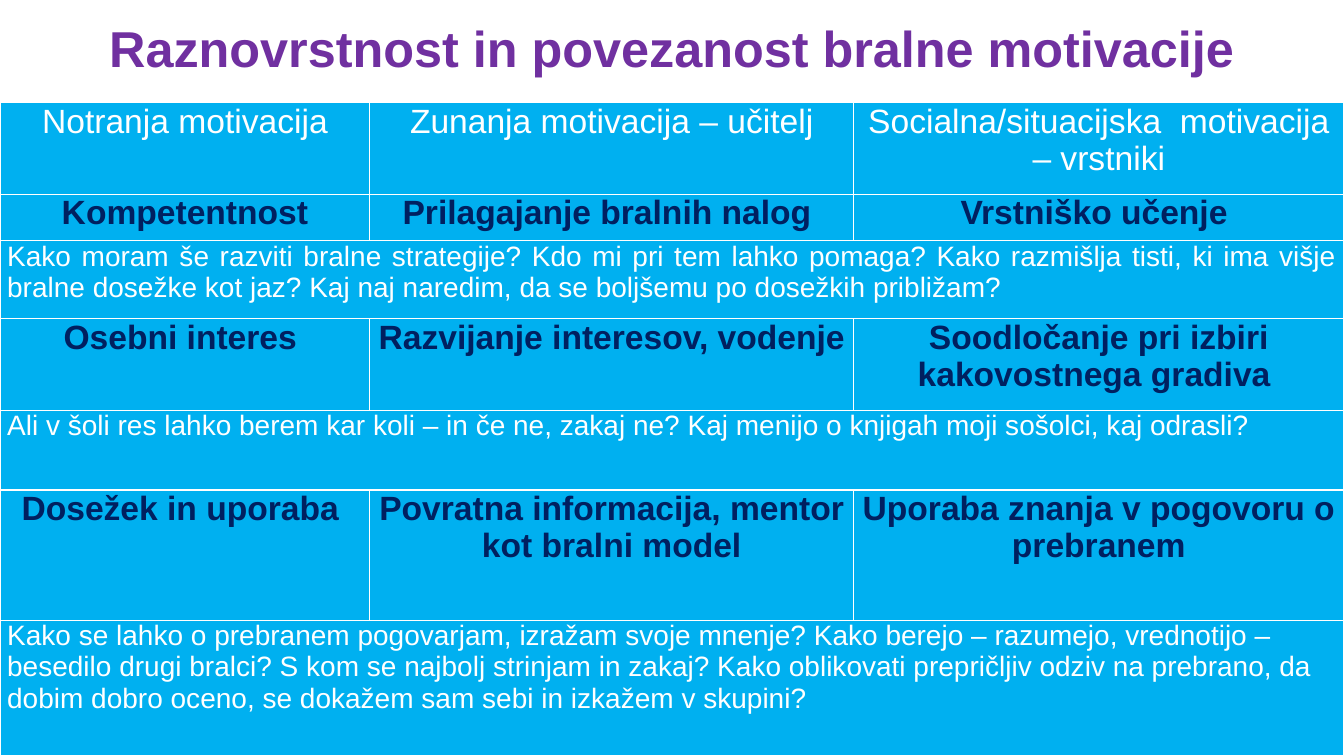
from lxml.etree import SubElement as SubEl
from pptx import Presentation
from pptx.dml.color import RGBColor
from pptx.enum.text import MSO_ANCHOR as Anchor, PP_ALIGN as Align
from pptx.oxml import parse_xml
from pptx.oxml.ns import nsdecls, qn
from pptx.util import Cm, Pt

WHITE, NAVY, SKY, PURPLE = "FFFFFF", "002060", "00B0F0", "7030A0"


def write(frame, text, size=24, color=WHITE, bold=False, align=Align.CENTER, spacing=None):
    frame.word_wrap = True
    paragraph = frame.paragraphs[0]
    paragraph.alignment = align
    paragraph.line_spacing = spacing
    run = paragraph.add_run()
    run.text = text
    run.font.name = "Arial"
    run.font.size = Pt(size)
    run.font.bold = bold
    run.font.color.rgb = RGBColor.from_string(color)


def paint(cell):
    properties = cell._tc.get_or_add_tcPr()
    for side in ("a:lnL", "a:lnR", "a:lnT", "a:lnB"):
        border = SubEl(properties, qn(side), w=str(Pt(1)))
        border.append(parse_xml(
            f'<a:solidFill {nsdecls("a")}><a:srgbClr val="{WHITE}"/></a:solidFill>'))
    cell.fill.solid()
    cell.fill.fore_color.rgb = RGBColor.from_string(SKY)
    cell.margin_left = cell.margin_right = Cm(0.18)
    cell.margin_top = cell.margin_bottom = 0


deck = Presentation()
deck.slide_width, deck.slide_height = Cm(33.87), Cm(19.05)
slide = deck.slides.add_slide(deck.slide_layouts[5])

heading = slide.shapes.title
heading.left, heading.top, heading.width, heading.height = Cm(2.33), Cm(0.48), Cm(29.21), Cm(1.6)
heading.text_frame.vertical_anchor = Anchor.MIDDLE
write(heading.text_frame, "Raznovrstnost in povezanost bralne motivacije",
      size=36, color=PURPLE, bold=True, spacing=0.9)

column_widths = [9.32, 12.19, 12.36]
motivation_rows = [
    (2.31, ["Notranja motivacija", "Zunanja motivacija – učitelj",
            "Socialna/situacijska  motivacija – vrstniki"]),
    (1.17, ["Kompetentnost", "Prilagajanje bralnih nalog ", "Vrstniško učenje "]),
    (1.96, ["Kako moram še razviti bralne strategije? Kdo mi pri tem lahko pomaga? "
            "Kako razmišlja tisti, ki ima višje bralne dosežke kot jaz? "
            "Kaj naj naredim, da se boljšemu po dosežkih približam? "]),
    (2.31, ["Osebni interes ", "Razvijanje interesov, vodenje ",
            "Soodločanje pri izbiri kakovostnega gradiva "]),
    (2.01, ["Ali v šoli res lahko berem kar koli – in če ne, zakaj ne? "
            "Kaj menijo o knjigah moji sošolci, kaj odrasli?"]),
    (3.28, ["Dosežek in uporaba ", "Povratna informacija, mentor kot bralni model",
            "Uporaba znanja v pogovoru o prebranem"]),
    (3.42, ["Kako se lahko o prebranem pogovarjam, izražam svoje mnenje? "
            "Kako berejo – razumejo, vrednotijo – besedilo drugi bralci? "
            "S kom se najbolj strinjam in zakaj? "
            "Kako oblikovati prepričljiv odziv na prebrano, da dobim dobro oceno, "
            "se dokažem sam sebi in izkažem v skupini?"]),
]

motivation = slide.shapes.add_table(
    len(motivation_rows), len(column_widths), 0, Cm(2.59), Cm(33.87), Cm(16.46)).table
for column, width in zip(motivation.columns, column_widths):
    column.width = Cm(width)

for index, (height, texts) in enumerate(motivation_rows):
    motivation.rows[index].height = Cm(height)
    cells = list(motivation.rows[index].cells)
    for cell in cells:
        paint(cell)
    if len(texts) == 1:
        cells[0].merge(cells[-1])
        write(cells[0].text_frame, texts[0], size=20,
              align=Align.JUSTIFY if index == 2 else Align.LEFT)
        continue
    for cell, text in zip(cells, texts):
        write(cell.text_frame, text, color=NAVY if index else WHITE, bold=index > 0)

deck.save("out.pptx")
